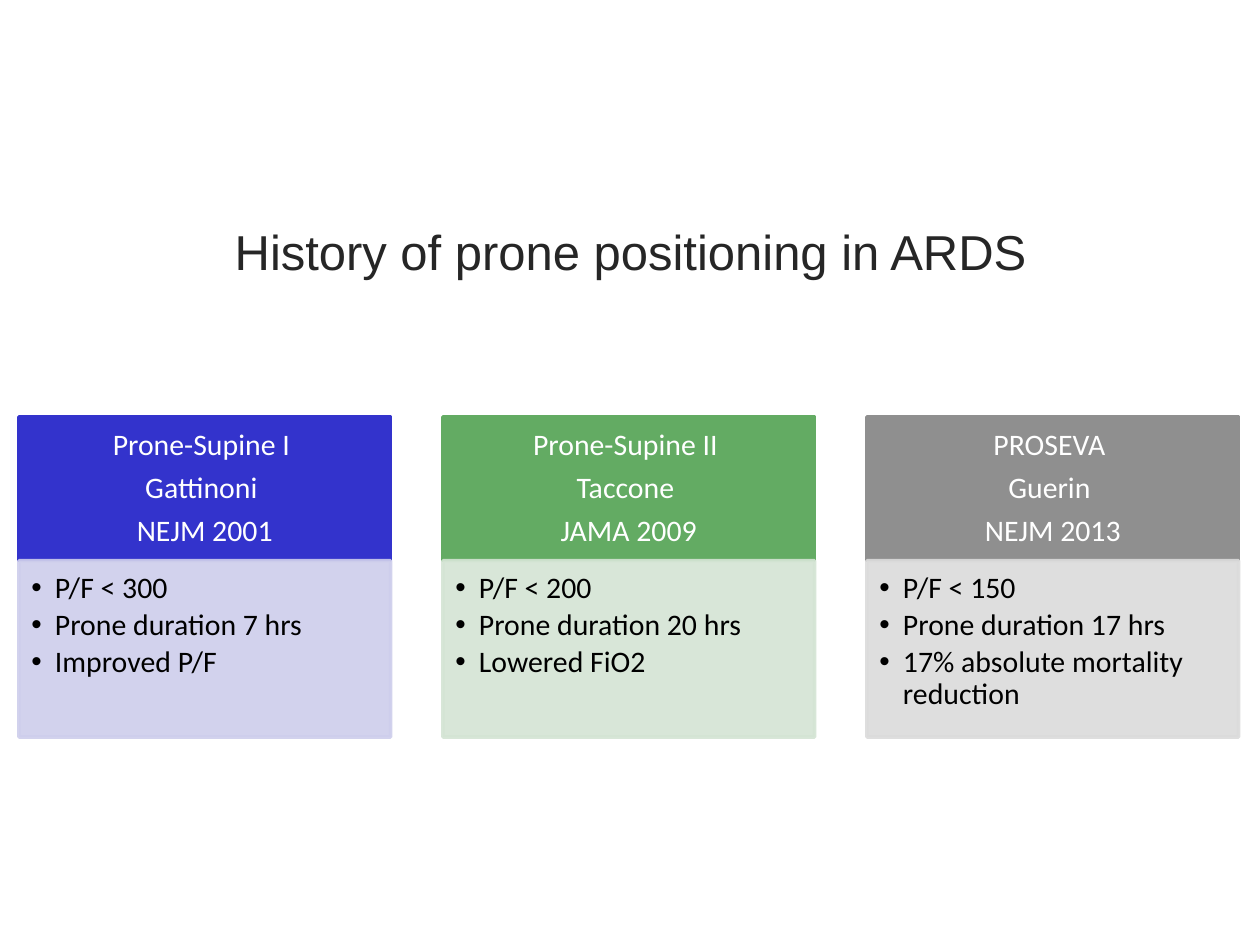
from dataclasses import dataclass

from lxml.etree import SubElement
from pptx import Presentation
from pptx.dml.color import RGBColor as Rgb
from pptx.enum.shapes import MSO_SHAPE as Preset
from pptx.enum.text import MSO_ANCHOR as Anchor, PP_ALIGN as Align
from pptx.oxml.ns import qn
from pptx.util import Pt


@dataclass(frozen=True)
class Theme:
    title_font: str = "Arial"
    body_font: str = "Calibri"
    title_size: float = 28
    body_size: float = 17
    title_color: str = "262626"
    header_color: str = "FFFFFF"
    finding_color: str = "000000"
    outline: float = 2
    opacity: int = 90


class TrialSlide:
    def __init__(self, slide, theme):
        self.slide = slide
        self.theme = theme

    def frame(self, shape, anchor, insets):
        frame = shape.text_frame
        frame.word_wrap = True
        frame.vertical_anchor = anchor
        (frame.margin_left, frame.margin_top,
         frame.margin_right, frame.margin_bottom) = map(Pt, insets)
        return frame

    def add_text(self, paragraph, text, font, size, color):
        run = paragraph.add_run()
        run.text = text
        run.font.name = font
        run.font.size = Pt(size)
        run.font.color.rgb = Rgb.from_string(color)

    def lines(self, frame, texts, color, align, gap, bulleted=False):
        for index, text in enumerate(texts):
            paragraph = frame.paragraphs[0] if index == 0 else frame.add_paragraph()
            if bulleted:
                self.bullet(paragraph)
            paragraph.alignment = align
            paragraph.line_spacing = 0.9
            paragraph.space_before = Pt(0)
            paragraph.space_after = Pt(gap)
            self.add_text(paragraph, text, self.theme.body_font,
                          self.theme.body_size, color)

    def bullet(self, paragraph):
        properties = paragraph._p.get_or_add_pPr()
        indent = Pt(13.5)
        properties.set("marL", str(indent))
        properties.set("indent", str(-indent))
        SubElement(properties, qn("a:buFont"), typeface="Arial")
        SubElement(properties, qn("a:buChar"), char="•")

    def panel(self, left, top, width, height, color, translucent=False):
        panel = self.slide.shapes.add_shape(
            Preset.RECTANGLE, Pt(left), Pt(top), Pt(width), Pt(height))
        panel.shadow.inherit = False
        panel.line.width = Pt(self.theme.outline)
        for fill in (panel.fill, panel.line.fill):
            fill.solid()
            fill.fore_color.rgb = Rgb.from_string(color)
        if translucent:
            for tone in panel._element.spPr.iter(qn("a:srgbClr")):
                SubElement(tone, qn("a:alpha"), val=str(self.theme.opacity * 1000))
        return panel

    def title(self, text, left, top, width, height):
        box = self.slide.shapes.add_textbox(Pt(left), Pt(top), Pt(width), Pt(height))
        paragraph = self.frame(box, Anchor.MIDDLE, (3.6,) * 4).paragraphs[0]
        paragraph.alignment = Align.CENTER
        self.add_text(paragraph, text, self.theme.title_font,
                      self.theme.title_size, self.theme.title_color)

    def header(self, texts, color, *place):
        frame = self.frame(self.panel(*place, color), Anchor.MIDDLE,
                           (9.4, 5.8, 9.4, 5.8))
        self.lines(frame, texts, self.theme.header_color, Align.CENTER, 5.95)

    def findings(self, texts, color, *place):
        frame = self.frame(self.panel(*place, color, translucent=True), Anchor.TOP,
                           (7.2, 7.2, 9.4, 10.8))
        self.lines(frame, texts, self.theme.finding_color, Align.LEFT, 2.55,
                   bulleted=True)


TRIALS = [
    ("3333CC", "CECEEC",
     ("Prone-Supine I ", "Gattinoni ", "NEJM 2001"),
     ("P/F < 300", "Prone duration 7 hrs", "Improved P/F")),
    ("63AB63", "D4E4D4",
     ("Prone-Supine II ", "Taccone ", "JAMA 2009"),
     ("P/F < 200", "Prone duration 20 hrs", "Lowered FiO2")),
    ("8F8F8F", "DBDBDB",
     ("PROSEVA ", "Guerin ", "NEJM 2013"),
     ("P/F < 150", "Prone duration 17 hrs", "17% absolute mortality reduction")),
]

LEFT, TOP, WIDTH, PITCH = 10.8, 238.3, 212.4, 242.3
HEADER_HEIGHT, FINDINGS_HEIGHT = 82.1, 100.8


def main():
    deck = Presentation()
    deck.slide_width, deck.slide_height = Pt(720), Pt(540)
    history = TrialSlide(deck.slides.add_slide(deck.slide_layouts[6]), Theme())
    history.title("History of prone positioning in ARDS", 34.4, 108.7, 651.6, 69.8)
    for column, (strong, pale, study, results) in enumerate(TRIALS):
        left = LEFT + column * PITCH
        history.header(study, strong, left, TOP, WIDTH, HEADER_HEIGHT)
        history.findings(results, pale, left, TOP + HEADER_HEIGHT, WIDTH,
                         FINDINGS_HEIGHT)
    deck.save("out.pptx")


if __name__ == "__main__":
    main()
